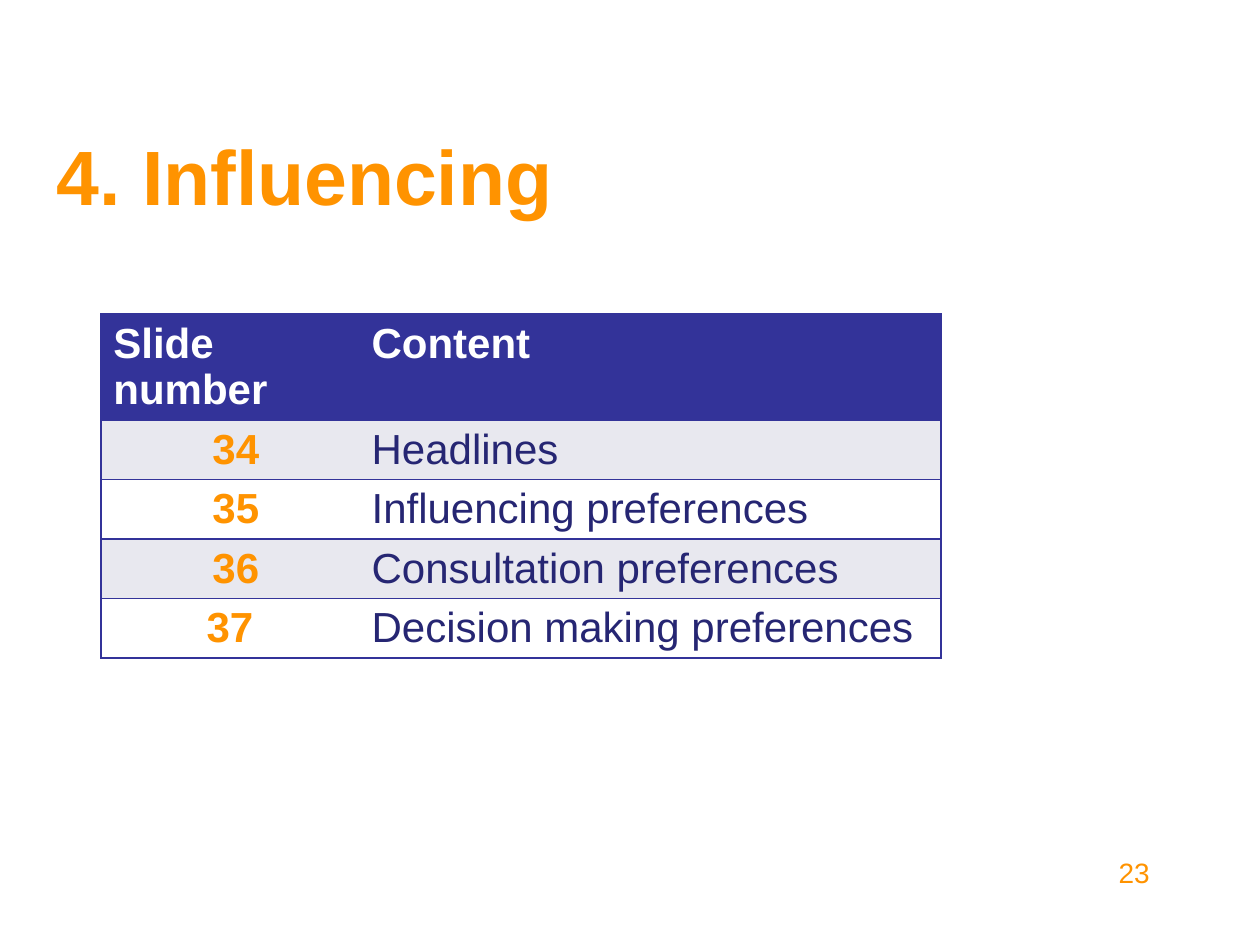
from dataclasses import dataclass

from lxml.etree import SubElement
from pptx import Presentation
from pptx.dml.color import RGBColor as Rgb
from pptx.enum.text import MSO_ANCHOR as Anchor, PP_ALIGN as Align
from pptx.oxml.ns import qn
from pptx.slide import Slide
from pptx.util import Inches, Pt

COLORS = {"accent": "FF9300", "header": "333399", "body": "262673",
          "band": "E8E8EF", "white": "FFFFFF"}
WIDTH, HEIGHT = 10, 7.5
COLUMNS, ROWS = 100, 75
CONTENTS = [(" 34", "Headlines"), (" 35", "Influencing preferences"),
            (" 36", "Consultation preferences"), ("37", "Decision making preferences")]


@dataclass
class SlideBuilder:
    """Draw styled elements on a slide, with lengths in grid columns and rows."""
    slide: Slide
    font: str = "Arial"

    def across(self, columns):
        return Inches(WIDTH * columns / COLUMNS)

    def down(self, rows):
        return Inches(HEIGHT * rows / ROWS)

    def frame(self, left, top, width, height):
        return self.across(left), self.down(top), self.across(width), self.down(height)

    def add_text(self, paragraph, text, size, color, bold=False, align=Align.LEFT):
        paragraph.alignment = align
        run = paragraph.add_run()
        run.text = text
        run.font.name, run.font.size, run.font.bold = self.font, Pt(size), bold
        run.font.color.rgb = Rgb.from_string(COLORS[color])

    def title(self, text, *place):
        shape = self.slide.shapes.title
        shape.left, shape.top, shape.width, shape.height = self.frame(*place)
        text_frame = shape.text_frame
        text_frame.vertical_anchor = Anchor.BOTTOM
        text_frame.margin_bottom = 0
        self.add_text(text_frame.paragraphs[0], text, 44, "accent", bold=True)

    def label(self, text, *place):
        text_frame = self.slide.shapes.add_textbox(*self.frame(*place)).text_frame
        text_frame.word_wrap = True
        self.add_text(text_frame.paragraphs[0], text, 16, "accent")

    def border(self, cell, sides):
        properties = cell._tc.get_or_add_tcPr()
        for position, side in enumerate("LRTB"):
            line = properties.makeelement(qn(f"a:ln{side}"), {"w": str(Pt(1))})
            if side in sides:
                fill = SubElement(line, qn("a:solidFill"))
                SubElement(fill, qn("a:srgbClr"), val=COLORS["header"])
            else:
                SubElement(line, qn("a:noFill"))
            properties.insert(position, line)

    def cell(self, cell, text, fill, color, bold, align, sides):
        cell.fill.solid()
        cell.fill.fore_color.rgb = Rgb.from_string(COLORS[fill])
        self.border(cell, sides)
        self.add_text(cell.text_frame.paragraphs[0], text, 24, color, bold, align)

    def table(self, headings, records, left, top, widths, header_height, row_height):
        heights = [header_height] + [row_height] * len(records)
        place = self.frame(left, top, sum(widths), sum(heights))
        table = self.slide.shapes.add_table(len(heights), len(widths), *place).table
        for column, width in zip(table.columns, widths):
            column.width = self.across(width)
        for row, height in zip(table.rows, heights):
            row.height = self.down(height)
        for index, record in enumerate([headings, *records]):
            for number, text in enumerate(record):
                if index == 0:
                    style = "header", "white", True, Align.LEFT
                else:
                    fill = "band" if index % 2 else "white"
                    style = ((fill, "body", False, Align.LEFT) if number
                             else (fill, "accent", True, Align.CENTER))
                self.cell(table.cell(index, number), text, *style,
                          sides="RTB" if number else "LTB")


def main():
    presentation = Presentation()
    presentation.slide_width, presentation.slide_height = Inches(WIDTH), Inches(HEIGHT)
    builder = SlideBuilder(presentation.slides.add_slide(presentation.slide_layouts[5]))
    builder.title("4. Influencing", 3.5, -4.2, 74.8, 21.7)
    builder.table(("Slide number", "Content"), CONTENTS, 8, 24.9, (20.5, 46.2), 8.4, 4.7)
    builder.label("23", 87.8, 67.4, 8.5, 3.7)
    presentation.save("out.pptx")


if __name__ == "__main__":
    main()
